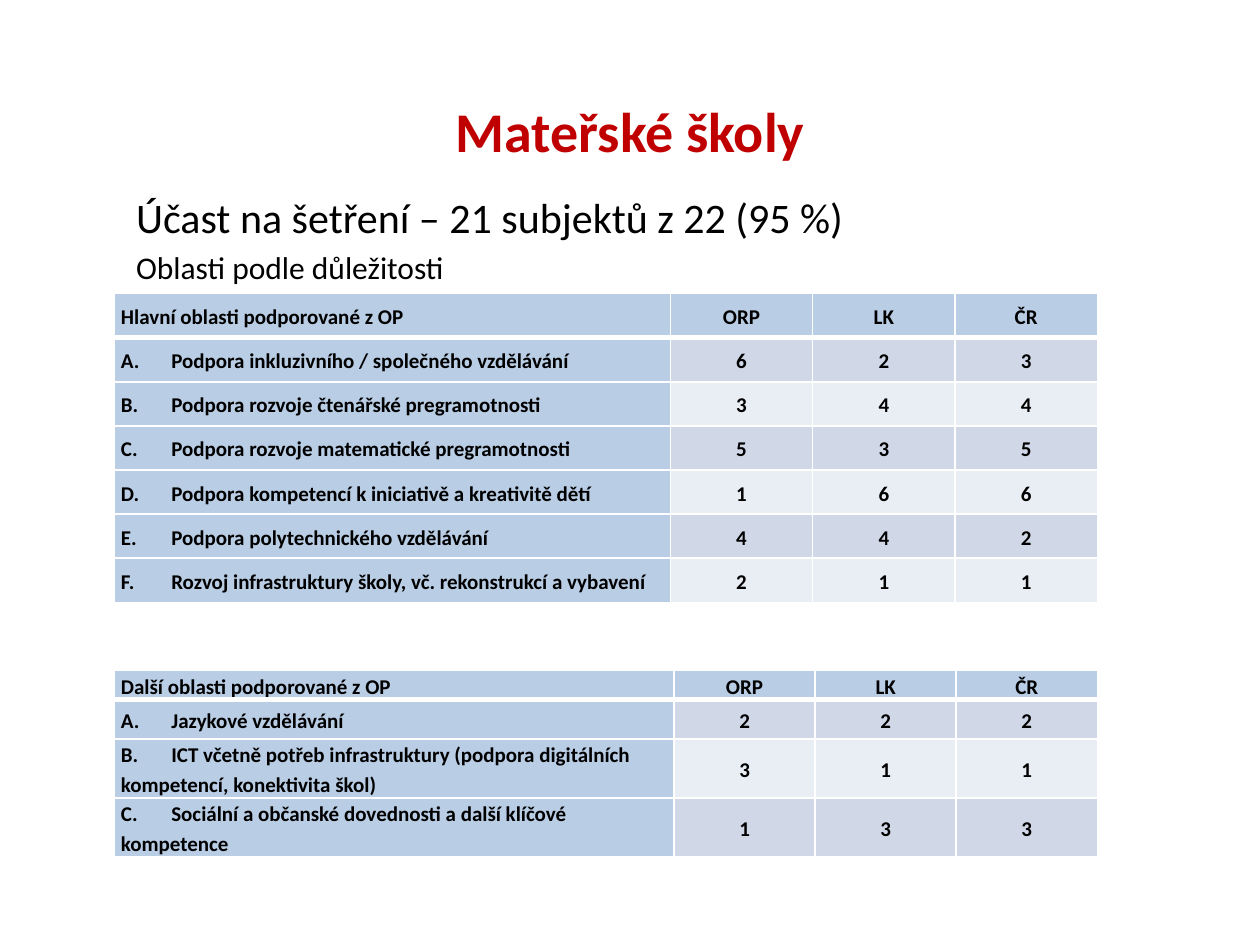
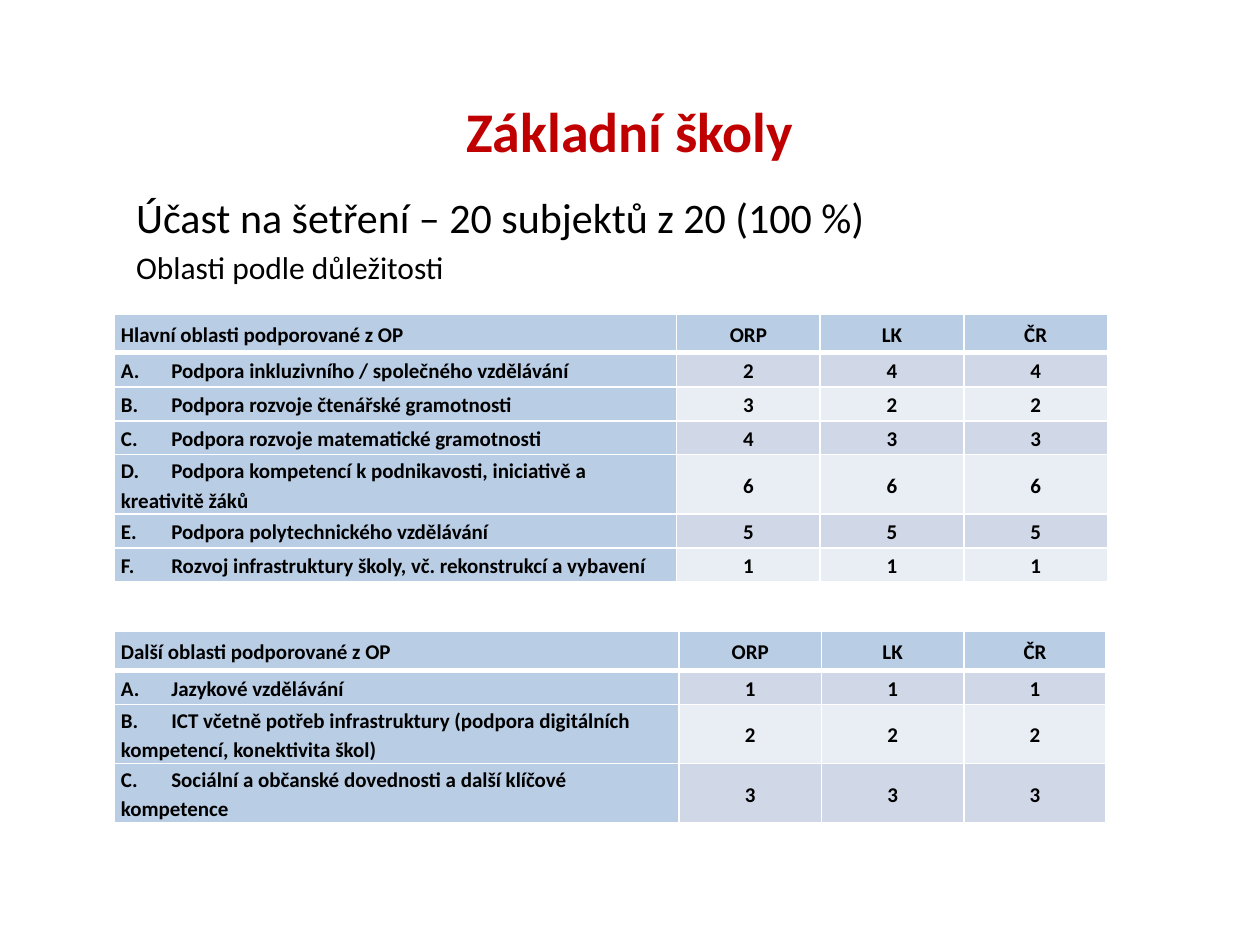
import pptx
import pptx.dml.color
import pptx.enum.text
import pptx.oxml
import pptx.oxml.ns
import pptx.util

Inches = pptx.util.Inches
Pt = pptx.util.Pt
ALIGN = pptx.enum.text.PP_ALIGN
MIDDLE = pptx.enum.text.MSO_ANCHOR.MIDDLE
NS = pptx.oxml.ns.nsdecls("a")
RED, BLACK, WHITE = "C00000", "000000", "FFFFFF"
BLUE, BANDS = "B9CDE5", ("D0D8E8", "E9EDF4")
TALL, WRAP = 0.47, 56
REGIONS = ("ORP", "LK", "ČR")

MORE = ("Jazykové vzdělávání",
        "ICT včetně potřeb infrastruktury (podpora digitálních kompetencí, konektivita škol)",
        "Sociální a občanské dovednosti a další klíčové kompetence")
TECH = "Podpora polytechnického vzdělávání"
BUILD = "Rozvoj infrastruktury školy, vč. rekonstrukcí a vybavení"
JOINT = "Podpora inkluzivního / společného vzdělávání"
NURSERY = (JOINT,
           "Podpora rozvoje čtenářské pregramotnosti",
           "Podpora rozvoje matematické pregramotnosti",
           "Podpora kompetencí k iniciativě a kreativitě dětí",
           TECH, BUILD)
PRIMARY = (JOINT,
           "Podpora rozvoje čtenářské gramotnosti",
           "Podpora rozvoje matematické gramotnosti",
           "Podpora kompetencí k podnikavosti, iniciativě a kreativitě žáků",
           TECH, BUILD)


def color(text):
    return pptx.dml.color.RGBColor.from_string(text)


class Deck:
    """Holds the shared style and the current slide."""

    def __init__(self):
        self.show = pptx.Presentation()
        self.show.slide_width = Inches(10)
        self.show.slide_height = Inches(7.5)

    def style(self, para, size, tint=BLACK, bold=False, align=ALIGN.LEFT):
        para.alignment = align
        font = para.font
        font.name, font.size, font.bold = "Calibri", Pt(size), bold
        font.color.rgb = color(tint)

    def place(self, shape, left, top, width, height):
        shape.left, shape.top = Inches(left), Inches(top)
        shape.width, shape.height = Inches(width), Inches(height)

    def page(self, title, turnout):
        self.slide = self.show.slides.add_slide(self.show.slide_layouts[0])
        head, body = self.slide.placeholders
        self.place(head, 0.75, 0.6, 8.5, 0.87)
        head.text_frame.text = title
        head.text_frame.vertical_anchor = MIDDLE
        self.style(head.text_frame.paragraphs[0], 32, RED, True, ALIGN.CENTER)
        self.place(body, 0.98, 1.47, 8.11, 5.35)
        body.text_frame.text = f"Účast na šetření – {turnout}\nOblasti podle důležitosti"
        for para, size in zip(body.text_frame.paragraphs, (24, 18)):
            self.style(para, size)

    def edge(self, cell, side, width):
        cell._tc.get_or_add_tcPr().append(pptx.oxml.parse_xml(
            f'<a:ln{side} {NS} w="{Pt(width)}"><a:solidFill>'
            f'<a:srgbClr val="{WHITE}"/></a:solidFill></a:ln{side}>'))

    def cell(self, cell, text, row, col):
        cell.text = text
        cell.vertical_anchor = MIDDLE
        cell.margin_left = cell.margin_right = Inches(0.05)
        cell.margin_top = cell.margin_bottom = 0
        para = cell.text_frame.paragraphs[0]
        self.style(para, 12, bold=True, align=ALIGN.CENTER if col else ALIGN.LEFT)
        para.line_spacing = 1.15
        if row and not col:
            para._p.get_or_add_pPr().append(pptx.oxml.parse_xml(
                f'<a:tabLst {NS}><a:tab pos="{Inches(0.4)}" algn="l"/></a:tabLst>'))
        for side, width in zip("LRTB", (1, 1, 3 if row == 1 else 1, 1 if row else 3)):
            self.edge(cell, side, width)
        cell.fill.solid()
        cell.fill.fore_color.rgb = color(BANDS[(row - 1) % 2] if row and col else BLUE)

    def table(self, kind, areas, ranks, top, widths, heights):
        first, other = widths
        head, line = heights
        rows = [(f"{kind} oblasti podporované z OP", *REGIONS)]
        rows += [(f"{mark}.\t{area}", *rank)
                 for mark, area, rank in zip("ABCDEF", areas, ranks)]
        tall = [head] + [TALL if len(area) > WRAP else line for area in areas]
        grid = self.slide.shapes.add_table(
            len(rows), 4, Inches(0.91), Inches(top),
            Inches(first + 3 * other), Inches(sum(tall))).table
        for col, width in zip(grid.columns, (first, other, other, other)):
            col.width = Inches(width)
        for row, texts in enumerate(rows):
            grid.rows[row].height = Inches(tall[row])
            for col, text in enumerate(texts):
                self.cell(grid.cell(row, col), text, row, col)


def main():
    deck = Deck()
    deck.page("Mateřské školy", "21 subjektů z 22 (95 %)")
    deck.table("Hlavní", NURSERY, ("623", "344", "535", "166", "442", "211"),
               2.33, (4.41, 1.13), (0.35, 0.35))
    deck.table("Další", MORE, ("222", "311", "133"),
               5.32, (4.44, 1.12), (0.23, 0.31))
    deck.page("Základní školy", "20 subjektů z 20 (100 %)")
    deck.table("Hlavní", PRIMARY, ("244", "322", "433", "666", "555", "111"),
               2.49, (4.46, 1.14), (0.31, 0.27))
    deck.table("Další", MORE, ("111", "222", "333"),
               5.01, (4.48, 1.13), (0.31, 0.27))
    deck.show.save("out.pptx")


if __name__ == "__main__":
    main()
